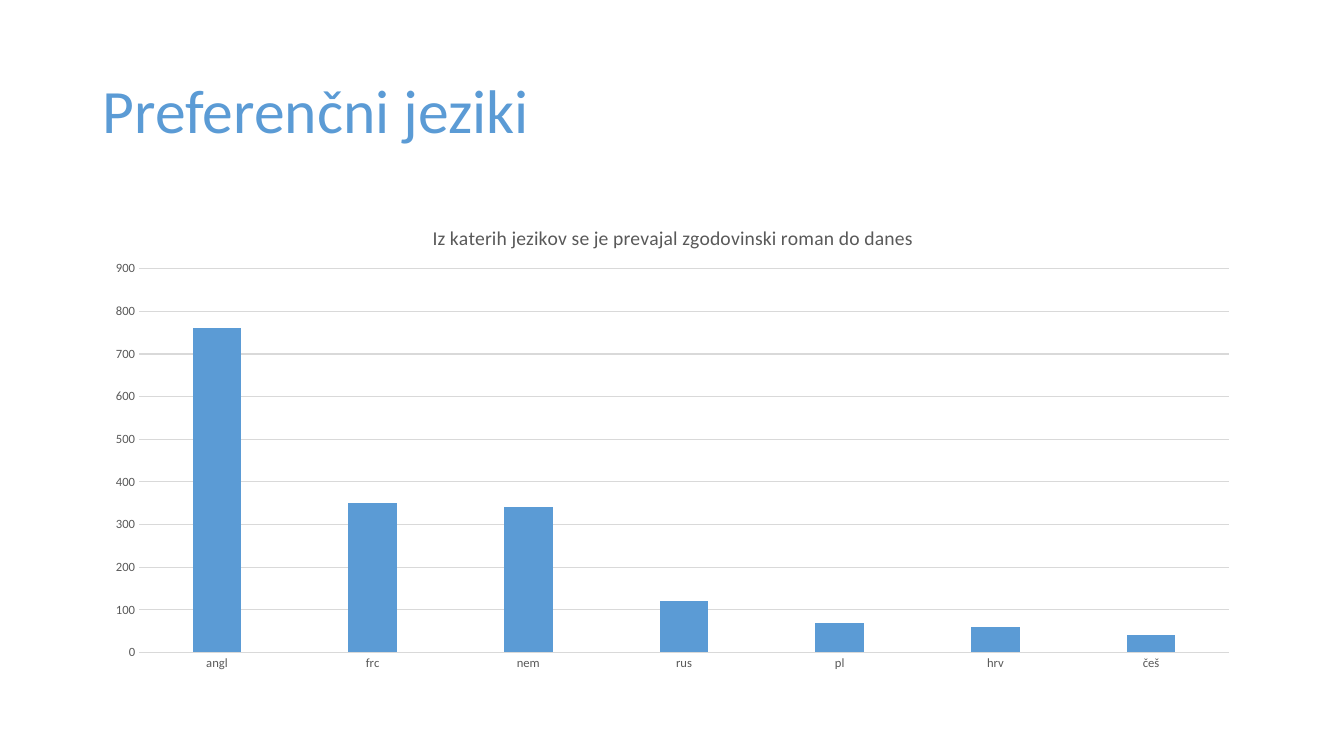
from lxml.etree import SubElement
from pptx import Presentation
from pptx.chart.data import CategoryChartData
from pptx.dml.color import RGBColor
from pptx.enum.chart import XL_CHART_TYPE, XL_TICK_MARK
from pptx.enum.text import MSO_ANCHOR, PP_ALIGN
from pptx.oxml.ns import qn
from pptx.util import Inches, Pt

BLUE = RGBColor(0x5B, 0x9B, 0xD5)
GREY = RGBColor(0x59, 0x59, 0x59)
LIGHT_GREY = RGBColor(0xD9, 0xD9, 0xD9)
BLACK = RGBColor(0, 0, 0)
FONT = "Calibri"
WIDTH, HEIGHT = Inches(13.33), Inches(7.5)
MARGIN = Inches(0.92)
CONTENT_WIDTH = Inches(11.5)
TRANSLATIONS = {"angl": 760, "frc": 350, "nem": 340, "rus": 120,
                "pl": 70, "hrv": 60, "češ": 40}


def style_font(font, size, color):
    """Apply the slide's typeface with a size and a colour."""
    font.name = FONT
    font.size = Pt(size)
    font.bold = False
    font.color.rgb = color


def style_line(line):
    """Draw a thin light grey line."""
    line.color.rgb = LIGHT_GREY
    line.width = Pt(0.75)


def place_part(part, **shares):
    """Place a chart part by shares of the chart's size."""
    layout = part.find(qn("c:layout"))
    if layout is None:
        layout = part.makeelement(qn("c:layout"))
        text = part.find(qn("c:tx"))
        part.insert(0 if text is None else part.index(text) + 1, layout)
    manual = SubElement(layout, qn("c:manualLayout"))
    if "w" in shares:
        SubElement(manual, qn("c:layoutTarget")).set("val", "inner")
    for axis in "xy":
        SubElement(manual, qn(f"c:{axis}Mode")).set("val", "edge")
    for name, share in shares.items():
        SubElement(manual, qn(f"c:{name}")).set("val", str(share))


def add_heading(slide, left, top, width, height):
    """Fill and place the title placeholder."""
    heading = slide.shapes.title
    heading.left, heading.top, heading.width, heading.height = left, top, width, height
    frame = heading.text_frame
    frame.text = "Preferenčni jeziki"
    frame.vertical_anchor = MSO_ANCHOR.MIDDLE
    paragraph = frame.paragraphs[0]
    paragraph.alignment = PP_ALIGN.LEFT
    paragraph.line_spacing = 0.9
    style_font(paragraph.runs[0].font, 44, BLUE)


def add_language_chart(slide, left, top, width, height):
    """Add the column chart of source languages."""
    counts = CategoryChartData()
    counts.categories = list(TRANSLATIONS)
    counts.add_series("Series 1", list(TRANSLATIONS.values()))
    chart = slide.shapes.add_chart(
        XL_CHART_TYPE.COLUMN_CLUSTERED, left, top, width, height, counts).chart
    style_font(chart.font, 10, BLACK)
    chart.has_legend = False

    caption = chart.chart_title.text_frame
    caption.text = "Iz katerih jezikov se je prevajal zgodovinski roman do danes"
    style_font(caption.paragraphs[0].runs[0].font, 14, GREY)
    chart.chart_title.include_in_layout = False

    plot = chart.plots[0]
    plot.gap_width, plot.overlap = 219, -27
    plot.vary_by_categories = False
    columns = plot.series[0].format.fill
    columns.solid()
    columns.fore_color.rgb = BLUE

    languages, amounts = chart.category_axis, chart.value_axis
    for axis in (languages, amounts):
        axis.major_tick_mark = axis.minor_tick_mark = XL_TICK_MARK.NONE
        style_font(axis.tick_labels.font, 9, GREY)
    style_line(languages.format.line)
    amounts.format.line.fill.background()
    amounts.minimum_scale, amounts.maximum_scale, amounts.major_unit = 0, 900, 100
    style_line(amounts.major_gridlines.format.line)

    chart_xml = chart.element.find(qn("c:chart"))
    place_part(chart_xml.find(qn("c:title")), x=0.29, y=0.04)
    place_part(chart_xml.find(qn("c:plotArea")), x=0.04, y=0.14, w=0.94, h=0.8)


def main():
    """Build and save the slide."""
    deck = Presentation()
    deck.slide_width, deck.slide_height = WIDTH, HEIGHT
    slide = deck.slides.add_slide(deck.slide_layouts[5])
    add_heading(slide, MARGIN, Inches(0.4), CONTENT_WIDTH, Inches(1.45))
    add_language_chart(slide, MARGIN, Inches(2), CONTENT_WIDTH, Inches(4.76))
    deck.save("out.pptx")


if __name__ == "__main__":
    main()
